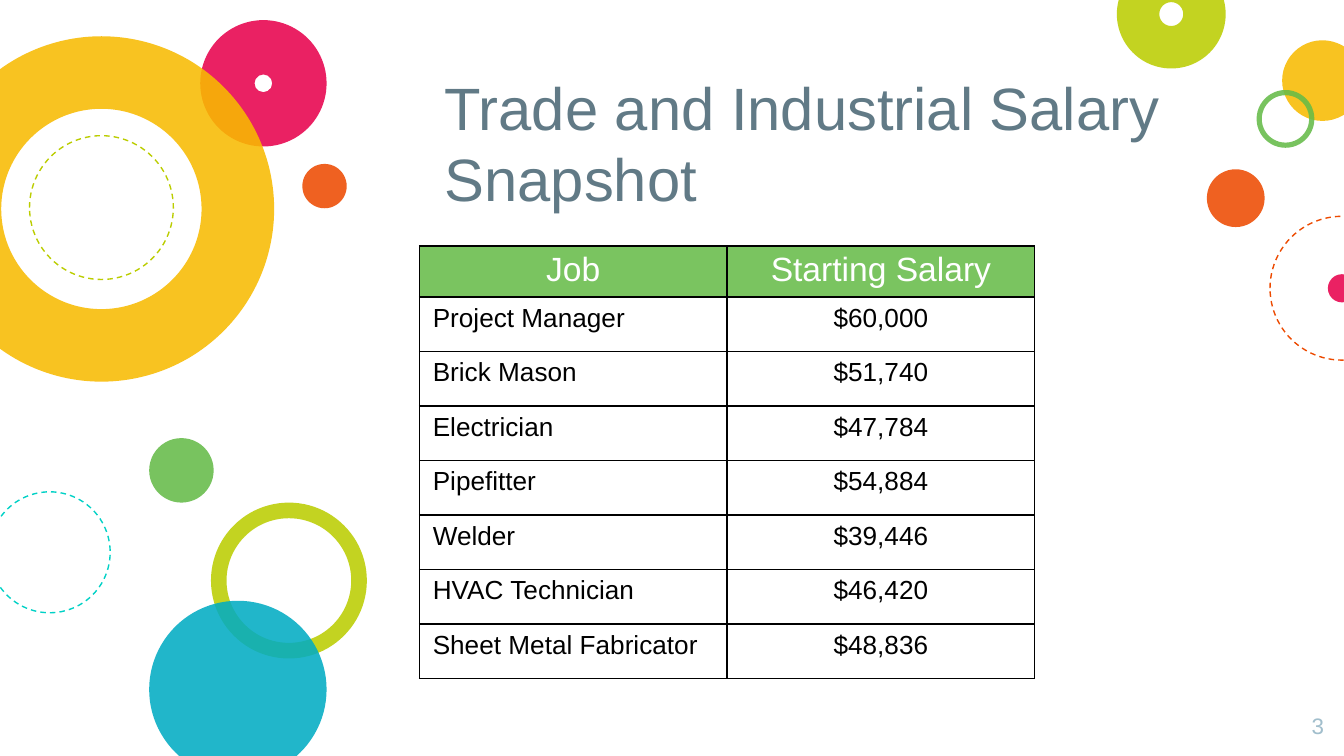
from lxml import etree
from pptx import Presentation
from pptx.dml.color import RGBColor
from pptx.enum.dml import MSO_LINE
from pptx.enum.shapes import MSO_SHAPE
from pptx.enum.text import MSO_ANCHOR, PP_ALIGN
from pptx.oxml.ns import qn
from pptx.util import Inches, Pt

OVAL, DONUT = MSO_SHAPE.OVAL, MSO_SHAPE.DONUT
DASH = MSO_LINE.DASH
TOP, BOTTOM = MSO_ANCHOR.TOP, MSO_ANCHOR.BOTTOM
LEFT, CENTER, RIGHT = PP_ALIGN.LEFT, PP_ALIGN.CENTER, PP_ALIGN.RIGHT

FONT = "Arial"
ORANGE, GREEN, LIME = "ED4A00", "65BB48", "BBCD00"
PINK, YELLOW, TEAL, AQUA = "E8004C", "F8BB00", "00ACC3", "00D1C6"
HEADER_GREEN, SLATE, PALE_BLUE = "7AC460", "617A86", "A1BECC"
BLACK, WHITE = "000000", "FFFFFF"
OPACITY = 87

SLIDE_W = 10
SLIDE_H = SLIDE_W * 9 / 16
TITLE = "Trade and Industrial Salary Snapshot"
PAGE = "3"
SALARIES = [
    ("Job", "Starting Salary"),
    ("Project Manager", "$60,000"),
    ("Brick Mason", "$51,740"),
    ("Electrician", "$47,784"),
    ("Pipefitter", "$54,884"),
    ("Welder", "$39,446"),
    ("HVAC Technician", "$46,420"),
    ("Sheet Metal Fabricator", "$48,836"),
]
TABLE_LEFT, TABLE_TOP, TABLE_H = 3.12, 1.83, 3.22
COL_W, HEADER_H = 2.29, 0.38
ROW_H = (TABLE_H - HEADER_H) / (len(SALARIES) - 1)
HEADER_INSET = 0.04

# style, left, top, diameter, colour, ring thickness
CIRCLES = [
    ("dashed", 9.45, 1.61, 1.07, ORANGE, None),
    ("disc", 1.11, 3.26, 0.48, GREEN, None),
    ("dashed", -0.08, 3.66, 0.9, AQUA, None),
    ("ring", 1.49, 0.15, 0.94, PINK, 0.43),
    ("ring", 1.57, 3.74, 1.16, LIME, 0.1),
    ("disc", 2.25, 1.22, 0.33, ORANGE, None),
    ("disc", 9.54, 0.3, 0.6, YELLOW, None),
    ("ring", 9.35, 0.67, 0.43, GREEN, 0.09),
    ("disc", 8.98, 1.26, 0.43, ORANGE, None),
    ("ring", 8.31, -0.3, 0.81, LIME, 0.39),
    ("disc", 9.88, 2.04, 0.21, PINK, None),
    ("ring", -0.53, 0.27, 2.57, YELLOW, 0.21),
    ("disc", 1.11, 4.47, 1.32, TEAL, None),
    ("dashed", 0.22, 1.01, 1.07, LIME, None),
]


def rgb(color):
    return RGBColor.from_string(color)


def write(tf, text, size, color, align):
    tf.text = text
    p = tf.paragraphs[0]
    p.alignment = align
    font = p.runs[0].font
    font.name, font.size, font.bold = FONT, Pt(size), False
    font.color.rgb = rgb(color)


def add_circle(slide, style, left, top, size, color, ring):
    s = slide.shapes.add_shape(DONUT if style == "ring" else OVAL,
                               Inches(left), Inches(top), Inches(size), Inches(size))
    s.shadow.inherit = False
    if style == "dashed":
        s.fill.background()
        s.line.color.rgb = rgb(color)
        s.line.width = Pt(0.75)
        s.line.dash_style = DASH
        return
    if style == "ring":
        s.adjustments[0] = ring
    s.line.fill.background()
    s.fill.solid()
    s.fill.fore_color.rgb = rgb(color)
    clr = s._element.spPr.find(qn("a:solidFill")).find(qn("a:srgbClr"))
    etree.SubElement(clr, qn("a:alpha"), val=str(OPACITY * 1000))


def add_text(slide, box, text, size, color, align, anchor):
    tf = slide.shapes.add_textbox(*map(Inches, box)).text_frame
    tf.word_wrap = True
    tf.vertical_anchor = anchor
    tf.margin_left = tf.margin_right = tf.margin_top = tf.margin_bottom = Inches(0.1)
    write(tf, text, size, color, align)


def add_borders(cell):
    tc_pr = cell._tc.get_or_add_tcPr()
    for i, side in enumerate(("a:lnL", "a:lnR", "a:lnT", "a:lnB")):
        ln = etree.Element(qn(side), w=str(Pt(0.75)))
        fill = etree.SubElement(ln, qn("a:solidFill"))
        etree.SubElement(fill, qn("a:srgbClr"), val=BLACK)
        tc_pr.insert(i, ln)


def add_salary_table(slide):
    rows, cols = len(SALARIES), len(SALARIES[0])
    table = slide.shapes.add_table(rows, cols, Inches(TABLE_LEFT), Inches(TABLE_TOP),
                                   Inches(cols * COL_W), Inches(TABLE_H)).table
    table.horz_banding = False
    for col in table.columns:
        col.width = Inches(COL_W)
    for r, values in enumerate(SALARIES):
        header = r == 0
        table.rows[r].height = Inches(HEADER_H if header else ROW_H)
        for c, value in enumerate(values):
            cell = table.cell(r, c)
            if header:
                cell.margin_top = cell.margin_bottom = Inches(HEADER_INSET)
                cell.fill.solid()
                cell.fill.fore_color.rgb = rgb(HEADER_GREEN)
            else:
                cell.fill.background()
            add_borders(cell)
            write(cell.text_frame, value, 18 if header else 14,
                  WHITE if header else BLACK, CENTER if header or c else LEFT)


def main():
    prs = Presentation()
    prs.slide_width, prs.slide_height = Inches(SLIDE_W), Inches(SLIDE_H)
    slide = prs.slides.add_slide(prs.slide_layouts[6])
    for circle in CIRCLES:
        add_circle(slide, *circle)
    add_text(slide, (3.21, 0.99, 5.77, 0.7), TITLE, 32, SLATE, LEFT, BOTTOM)
    add_text(slide, (9.44, 5.2, 0.51, 0.43), PAGE, 12, PALE_BLUE, RIGHT, TOP)
    add_salary_table(slide)
    prs.save("out.pptx")


if __name__ == "__main__":
    main()
